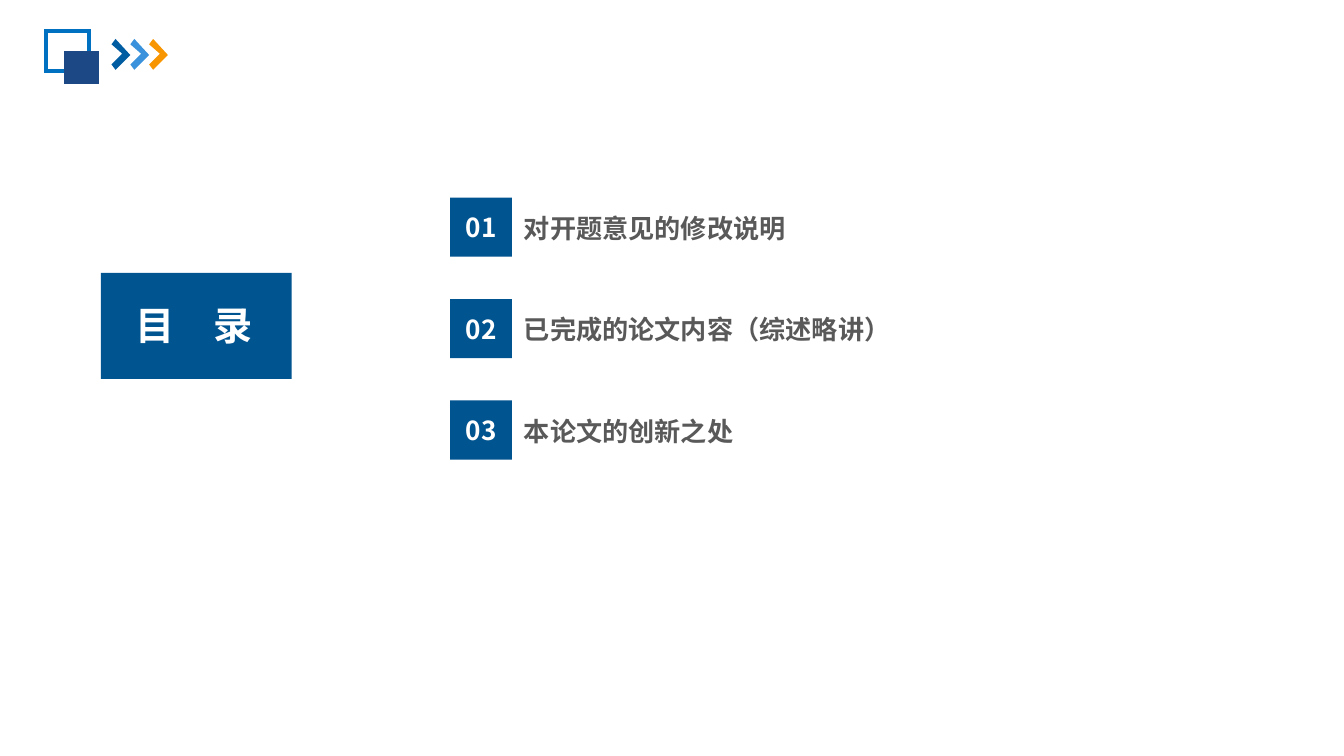
import pptx
import pptx.dml.color
import pptx.enum.shapes
import pptx.enum.text
import pptx.oxml
import pptx.oxml.ns
import pptx.util
from pptx.util import Inches

RGBColor = pptx.dml.color.RGBColor
WHITE = RGBColor(0xFF, 0xFF, 0xFF)
PANEL_BLUE = RGBColor(0x00, 0x54, 0x90)
FRAME_BLUE = RGBColor(0x00, 0x70, 0xC0)
NAVY = RGBColor(0x1C, 0x48, 0x85)
LABEL_GREY = RGBColor(0x59, 0x59, 0x59)
CHEVRON_COLORS = (
    RGBColor(0x00, 0x5D, 0xA2),
    RGBColor(0x39, 0x92, 0xDB),
    RGBColor(0xF7, 0x96, 0x00),
)
CJK_FONT = "Noto Sans CJK SC"
TOPICS = ("对开题意见的修改说明", "已完成的论文内容（综述略讲）", "本论文的创新之处")
CENTER = pptx.enum.text.PP_ALIGN.CENTER
LEFT = pptx.enum.text.PP_ALIGN.LEFT


def drawing_element(tag, attributes):
    return pptx.oxml.parse_xml(
        f'<a:{tag} {pptx.oxml.ns.nsdecls("a")} {attributes}/>')


def paint(shape, fill=None, line=None):
    shape.shadow.inherit = False
    if fill is None:
        shape.fill.background()
    else:
        shape.fill.solid()
        shape.fill.fore_color.rgb = fill
    if line is None:
        shape.line.fill.background()
    else:
        shape.line.color.rgb = line
        shape.line.width = pptx.util.Pt(2)
        outline = shape._element.spPr.find(pptx.oxml.ns.qn("a:ln"))
        outline.append(drawing_element("miter", 'lim="800000"'))


def add_rectangle(page, left, top, width, height, fill=None, line=None):
    box = page.shapes.add_shape(
        pptx.enum.shapes.MSO_SHAPE.RECTANGLE,
        Inches(left), Inches(top), Inches(width), Inches(height))
    paint(box, fill, line)
    return box


def write(box, text, size, color, align, font=CJK_FONT):
    """Put one bold line in the box, with the CJK font for Chinese glyphs."""
    para = box.text_frame.paragraphs[0]
    para.text = text
    para.alignment = align
    span = para.runs[0]
    span.font.size = pptx.util.Pt(size)
    span.font.bold = True
    span.font.name = font
    span.font.color.rgb = color
    latin = span.font._element.find(pptx.oxml.ns.qn("a:latin"))
    latin.addnext(drawing_element("ea", f'typeface="{CJK_FONT}"'))


def add_corner_squares(page, left, top):
    add_rectangle(page, left, top, 0.32, 0.3, line=FRAME_BLUE)
    add_rectangle(page, left + 0.15, top + 0.16, 0.23, 0.22, NAVY, NAVY)


def add_chevrons(page, left, top, pitch=0.14):
    outline = ((0, 0.04), (0.03, 0), (0.14, 0.12), (0.03, 0.23), (0, 0.19), (0.08, 0.11))
    for index, color in enumerate(CHEVRON_COLORS):
        points = [(Inches(left + index * pitch + x), Inches(top + y)) for x, y in outline]
        builder = page.shapes.build_freeform(*points[0])
        builder.add_line_segments(points[1:], close=True)
        paint(builder.convert_to_shape(), color)


def add_title_panel(page, left, top, width, height):
    add_rectangle(page, left, top, width, height, PANEL_BLUE)
    box = page.shapes.add_textbox(
        Inches(left + 0.15), Inches(top + 0.16), Inches(1.09), Inches(0.45))
    box.text_frame.word_wrap = False
    write(box, "目　录", 21, WHITE, CENTER, "Calibri")


def add_topic(page, left, top, number, topic):
    badge = add_rectangle(page, left, top, 0.46, 0.44, PANEL_BLUE)
    frame = badge.text_frame
    frame.margin_left = frame.margin_right = 0
    frame.vertical_anchor = pptx.enum.text.MSO_ANCHOR.MIDDLE
    write(badge, f"{number:02d}", 14, WHITE, CENTER)
    label = page.shapes.add_textbox(
        Inches(left + 0.45), Inches(top + 0.06), Inches(2.95), Inches(0.34))
    label.text_frame.word_wrap = True
    write(label, topic, 14, LABEL_GREY, LEFT)


def add_topic_list(page, left, top, last_top):
    pitch = (last_top - top) / (len(TOPICS) - 1)
    for index, topic in enumerate(TOPICS):
        add_topic(page, left, top + index * pitch, index + 1, topic)


def main():
    deck = pptx.Presentation()
    deck.slide_width = Inches(10)
    deck.slide_height = deck.slide_width * 9 // 16
    page = deck.slides.add_slide(deck.slide_layouts[6])
    add_title_panel(page, 0.75, 2.03, 1.42, 0.79)
    add_chevrons(page, 0.83, 0.29)
    add_corner_squares(page, 0.34, 0.23)
    add_topic_list(page, 3.35, 1.47, 2.98)
    deck.save("out.pptx")


if __name__ == "__main__":
    main()
